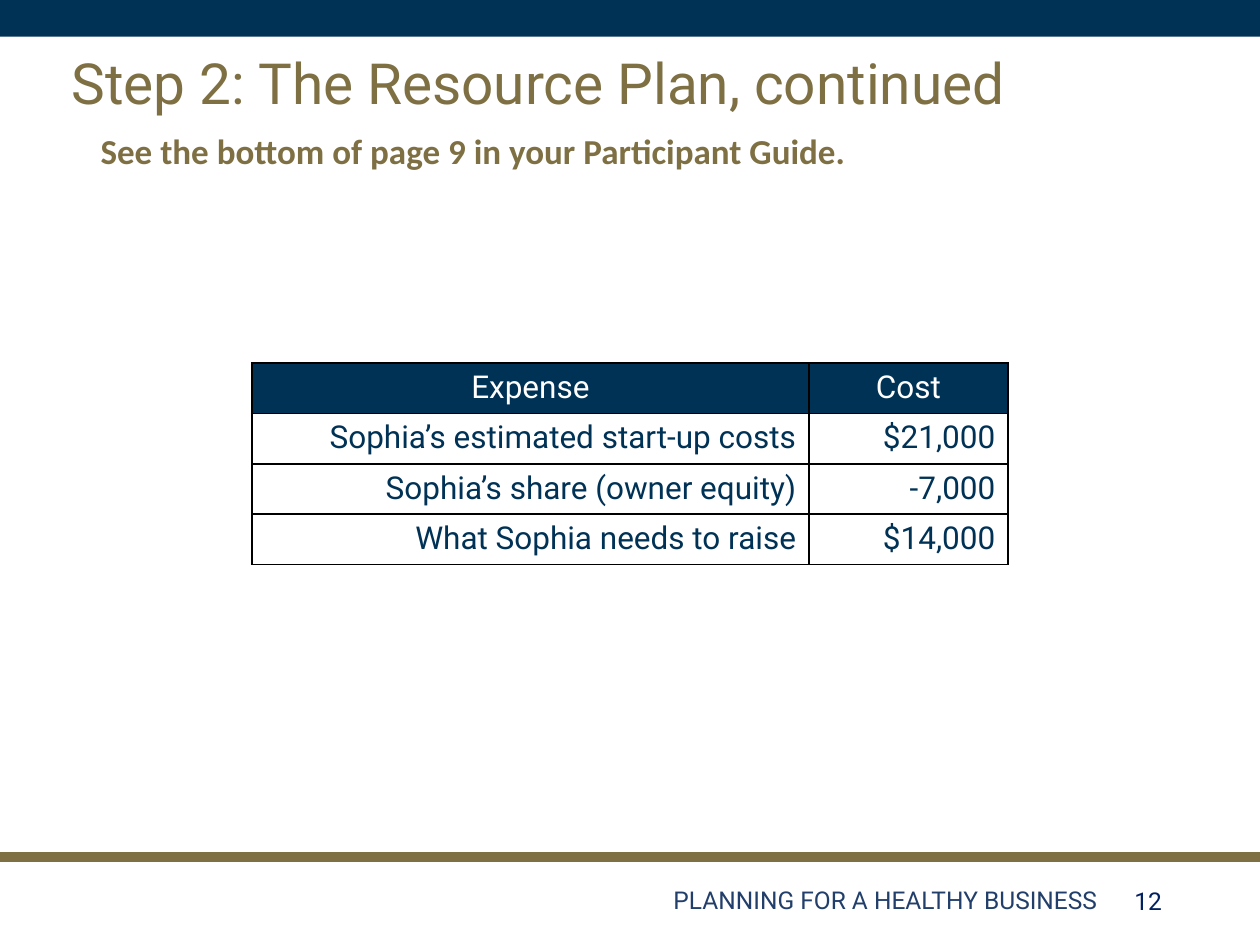
from lxml import etree
from pptx import Presentation
from pptx import util as u
from pptx.dml.color import RGBColor
from pptx.enum import shapes, text
from pptx.oxml.ns import qn

COLORS = {
    "navy": "003256",
    "gold": "7F7044",
    "white": "FFFFFF",
    "black": "000000",
    "footer": "223F6B",
    "number": "002060",
}
ALIGN = text.PP_ALIGN
MIDDLE = text.MSO_ANCHOR.MIDDLE
COSTS = [
    ("Expense", "Cost"),
    ("Sophia’s estimated start-up costs", "$21,000"),
    ("Sophia’s share (owner equity)", "-7,000"),
    ("What Sophia needs to raise", "$14,000"),
]


def rgb(color):
    return RGBColor.from_string(COLORS[color])


def write(frame, words, size, color, font="Roboto", bold=False, align=ALIGN.LEFT):
    paragraph = frame.paragraphs[0]
    paragraph.alignment = align
    run = paragraph.add_run()
    run.text = words
    run.font.name = font
    run.font.size = u.Pt(size)
    run.font.bold = bold
    run.font.color.rgb = rgb(color)
    return paragraph


def add_label(slide, place, words, size, color, anchor=MIDDLE, **style):
    label = slide.shapes.add_textbox(*map(u.Inches, place))
    frame = label.text_frame
    frame.word_wrap = True
    frame.vertical_anchor = anchor
    return write(frame, words, size, color, **style)


def add_header_band(slide):
    band = slide.shapes.add_shape(
        shapes.MSO_SHAPE.RECTANGLE, 0, 0, u.Inches(10), u.Inches(0.29))
    band.shadow.inherit = False
    band.fill.solid()
    band.fill.fore_color.rgb = rgb("navy")
    band.line.fill.background()


def add_footer_rule(slide):
    rule = slide.shapes.add_connector(
        shapes.MSO_CONNECTOR.STRAIGHT, 0, u.Inches(6.8), u.Inches(10), u.Inches(6.8))
    rule.line.color.rgb = rgb("gold")
    rule.line.width = u.Pt(6)
    etree.SubElement(rule._element.spPr, qn("a:effectLst"))


def add_borders(cell):
    properties = cell._tc.get_or_add_tcPr()
    for position, side in enumerate(("lnL", "lnR", "lnT", "lnB")):
        border = etree.Element(qn(f"a:{side}"), w=str(u.Pt(1)))
        fill = etree.SubElement(border, qn("a:solidFill"))
        etree.SubElement(fill, qn("a:srgbClr"), val=COLORS["black"])
        properties.insert(position, border)


def add_cost_table(slide):
    row_height = u.Inches(0.4)
    costs = slide.shapes.add_table(
        len(COSTS), 2, u.Inches(2), u.Inches(2.88),
        u.Inches(6), row_height * len(COSTS)).table
    costs.horz_banding = False
    for column, width in zip(costs.columns, (4.42, 1.58)):
        column.width = u.Inches(width)
    for r, entries in enumerate(COSTS):
        costs.rows[r].height = row_height
        heading = r == 0
        for c, words in enumerate(entries):
            cell = costs.cell(r, c)
            cell.fill.solid()
            cell.fill.fore_color.rgb = rgb("navy" if heading else "white")
            add_borders(cell)
            write(cell.text_frame, words, 18, "white" if heading else "navy",
                  align=ALIGN.CENTER if heading else ALIGN.RIGHT)


def main():
    deck = Presentation()
    deck.slide_width, deck.slide_height = u.Inches(10), u.Inches(7.5)
    slide = deck.slides.add_slide(deck.slide_layouts[6])
    add_header_band(slide)
    add_footer_rule(slide)
    title = add_label(slide, (0.47, 0.38, 8.62, 0.61),
                      "Step 2: The Resource Plan, continued", 32.4, "gold")
    title.line_spacing = 0.9
    add_label(slide, (0.7, 0.98, 7.3, 0.4),
              "See the bottom of page 9 in your Participant Guide.", 20, "gold",
              anchor=text.MSO_ANCHOR.TOP, font="Calibri", bold=True)
    add_cost_table(slide)
    add_label(slide, (4.14, 6.94, 4.67, 0.4),
              "PLANNING FOR A HEALTHY BUSINESS", 14, "footer", align=ALIGN.RIGHT)
    add_label(slide, (8.83, 6.95, 0.49, 0.4), "12", 14, "number", align=ALIGN.RIGHT)
    deck.save("out.pptx")


if __name__ == "__main__":
    main()
